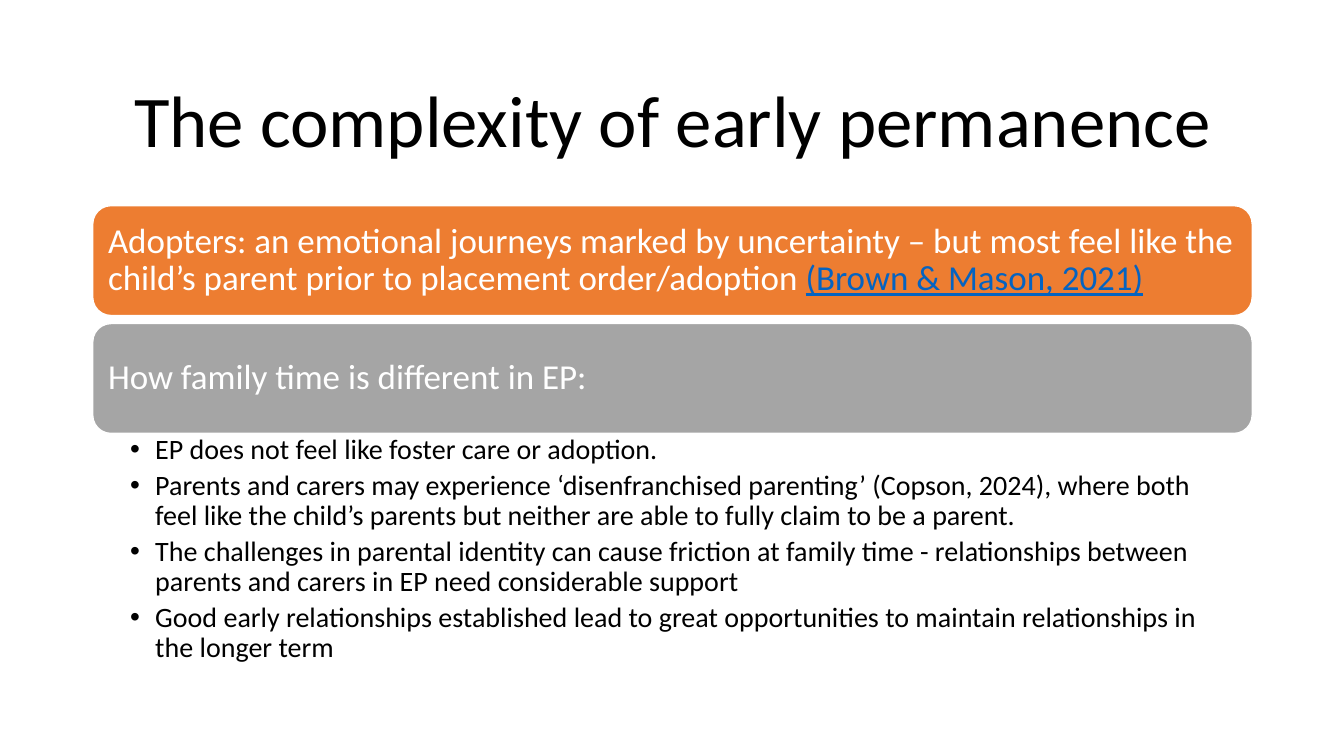
from dataclasses import dataclass

from pptx import Presentation
from pptx.dml.color import RGBColor
from pptx.enum.shapes import MSO_SHAPE as Shape
from pptx.enum.text import MSO_ANCHOR as Anchor, MSO_AUTO_SIZE as AutoSize, PP_ALIGN as Align
from pptx.oxml.ns import qn
from pptx.util import Pt
from lxml.etree import SubElement

EMU_PER_PX = 9144  # 100 px to the inch
TITLE_ONLY = 5


@dataclass(frozen=True)
class Theme:
    font: str = "Calibri"
    black: str = "000000"
    white: str = "FFFFFF"
    orange: str = "ED7D31"
    grey: str = "A5A5A5"
    link: str = "0563C1"
    title_size: int = 52
    bar_size: int = 25
    bullet_size: int = 20
    line_spacing: float = 0.9
    bullet_gap: int = 4


def px(*lengths):
    return [length * EMU_PER_PX for length in lengths]


class SlideBuilder:
    def __init__(self, slide, theme):
        self.slide = slide
        self.theme = theme

    def format_run(self, run, size, color):
        run.font.name = self.theme.font
        run.font.size = Pt(size)
        run.font.color.rgb = RGBColor.from_string(color)

    def set_insets(self, frame, left, top, right, bottom):
        frame.margin_left, frame.margin_top, frame.margin_right, frame.margin_bottom = px(
            left, top, right, bottom)

    def title(self, text, box):
        title = self.slide.shapes.title
        title.left, title.top, title.width, title.height = px(*box)
        frame = title.text_frame
        frame.text = text
        frame.auto_size = AutoSize.NONE
        frame.vertical_anchor = Anchor.MIDDLE
        paragraph = frame.paragraphs[0]
        paragraph.alignment = Align.CENTER
        paragraph.line_spacing = self.theme.line_spacing
        self.format_run(paragraph.runs[0], self.theme.title_size, self.theme.black)

    def bar(self, text, box, fill, citation=None):
        """Rounded heading bar, optionally ending in an underlined citation."""
        bar = self.slide.shapes.add_shape(Shape.ROUNDED_RECTANGLE, *px(*box))
        bar.shadow.inherit = False
        bar.fill.solid()
        bar.fill.fore_color.rgb = RGBColor.from_string(fill)
        bar.line.color.rgb = RGBColor.from_string(self.theme.white)
        bar.line.width = Pt(1)
        frame = bar.text_frame
        frame.text = text
        frame.word_wrap = True
        frame.vertical_anchor = Anchor.MIDDLE
        self.set_insets(frame, 10, 10, 10, 10)
        paragraph = frame.paragraphs[0]
        paragraph.alignment = Align.LEFT
        paragraph.line_spacing = self.theme.line_spacing
        self.format_run(paragraph.runs[0], self.theme.bar_size, self.theme.white)
        if citation:
            run = paragraph.add_run()
            run.text = citation
            run.font.underline = True
            self.format_run(run, self.theme.bar_size, self.theme.link)

    def bullets(self, items, box, indent):
        frame = self.slide.shapes.add_textbox(*px(*box)).text_frame
        frame.text = "\n".join(items)
        frame.word_wrap = True
        self.set_insets(frame, 37, 3, 19, 3)
        for paragraph in frame.paragraphs:
            paragraph.level = 1
            paragraph.line_spacing = self.theme.line_spacing
            paragraph.space_after = Pt(self.theme.bullet_gap)
            self.format_run(paragraph.runs[0], self.theme.bullet_size, self.theme.black)
            properties = paragraph._p.get_or_add_pPr()
            hanging = indent * EMU_PER_PX
            properties.set("marL", str(hanging))
            properties.set("indent", str(-hanging))
            SubElement(properties, qn("a:buFont")).set("typeface", "Arial")
            SubElement(properties, qn("a:buChar")).set("char", "•")


def main():
    presentation = Presentation()
    presentation.slide_width, presentation.slide_height = px(1333, 750)
    theme = Theme()
    slide = presentation.slides.add_slide(presentation.slide_layouts[TITLE_ONLY])
    builder = SlideBuilder(slide, theme)

    left, width = 92, 1150
    bar_top, bar_height, bar_step = 204, 109, 117
    builder.title("The complexity of early permanence", (left, 61, width, 124))

    bars = [
        ("Adopters: an emotional journeys marked by uncertainty – but most feel like "
         "the child’s parent prior to placement order/adoption ",
         theme.orange, "(Brown & Mason, 2021)"),
        ("How family time is different in EP:", theme.grey, None),
    ]
    for index, (text, fill, citation) in enumerate(bars):
        box = (left, bar_top + index * bar_step, width, bar_height)
        builder.bar(text, box, fill, citation)

    bullets_top = bar_top + bar_step + bar_height - 1
    builder.bullets([
        "EP does not feel like foster care or adoption.",
        "Parents and carers may experience ‘disenfranchised parenting’ (Copson, 2024), "
        "where both feel like the child’s parents but neither are able to fully claim "
        "to be a parent.",
        "The challenges in parental identity can cause friction at family time - "
        "relationships between parents and carers in EP need considerable support",
        "Good early relationships established lead to great opportunities to maintain "
        "relationships in the longer term",
    ], (left, bullets_top, width, 243), indent=25)

    presentation.save("out.pptx")


if __name__ == "__main__":
    main()
